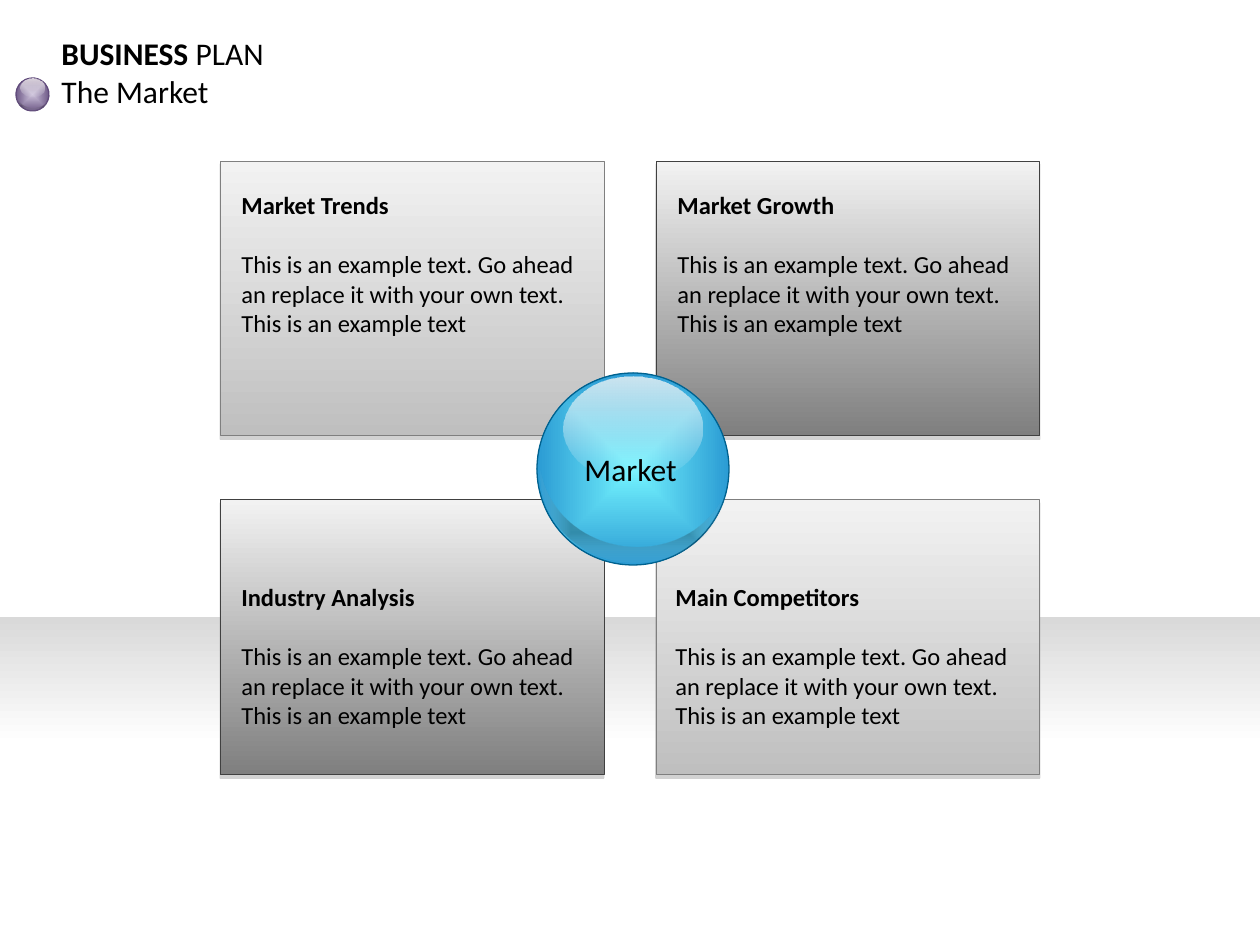
from lxml import etree
from pptx import Presentation
from pptx.dml.color import RGBColor
from pptx.enum.shapes import MSO_SHAPE
from pptx.oxml.ns import qn
from pptx.util import Pt

RECTANGLE, OVAL, MOON = MSO_SHAPE.RECTANGLE, MSO_SHAPE.OVAL, MSO_SHAPE.MOON
PX = 914400 / 126
FONT = "Calibri"
DOWN = '<a:lin ang="5400000" scaled="0"/>'
FROM_CENTRE = ('<a:path path="shape"><a:fillToRect l="50000" t="50000" '
               'r="50000" b="50000"/></a:path>')


def paint(shape, stops, direction, line=None, width=0.5):
    """Fill with a gradient of (percent, colour, opacity percent) stops and set the outline."""
    shape.shadow.inherit = False
    if line:
        shape.line.color.rgb = RGBColor.from_string(line)
        shape.line.width = Pt(width)
    else:
        shape.line.fill.background()
    stop_xml = "".join(
        f'<a:gs pos="{place * 1000}"><a:srgbClr val="{colour}">'
        f'<a:alpha val="{opacity * 1000}"/></a:srgbClr></a:gs>'
        for place, colour, opacity in stops)
    gradient = etree.fromstring(
        '<a:gradFill xmlns:a="http://schemas.openxmlformats.org/drawingml/2006/main" '
        f'rotWithShape="1"><a:gsLst>{stop_xml}</a:gsLst>{direction}</a:gradFill>')
    shape._element.spPr.find(qn("a:prstGeom")).addnext(gradient)


def add_text(bounds, size, paragraphs, gap=0):
    """Add a text box; each paragraph is a list of (text, bold) spans."""
    box = page.shapes.add_textbox(*[round(n * PX) for n in bounds])
    frame = box.text_frame
    frame.word_wrap = True
    for index, spans in enumerate(paragraphs):
        para = frame.add_paragraph() if index else frame.paragraphs[0]
        if index:
            para.space_before = Pt(gap)
        for text, bold in spans:
            span = para.add_run()
            span.text = text
            span.font.name = FONT
            span.font.size = Pt(size)
            span.font.bold = bold
            span.font.color.rgb = RGBColor.from_string("000000")


deck = Presentation()
deck.slide_width, deck.slide_height = round(1260 * PX), round(945 * PX)
page = deck.slides.add_slide(deck.slide_layouts[6])

# Shaded floor
floor = page.shapes.add_shape(RECTANGLE, 0, round(617 * PX), round(1260 * PX), round(328 * PX))
paint(floor, [(0, "D9D9D9", 100), (39, "FFFFFF", 100), (100, "FFFFFF", 100)], DOWN)

# Four panels: left, top, text left, text top, heading, end colour, outline
LIGHT, DARK = ("BFBFBF", "7F7F7F"), ("7F7F7F", "404040")
BODY = ("This is an example text. Go ahead an replace it with your own text. "
        "This is an example text")
panels = [
    (220, 161, 229, 184, "Market Trends", LIGHT),
    (656, 161, 665, 184, "Market Growth", DARK),
    (220, 500, 229, 576, "Industry Analysis", DARK),
    (656, 500, 663, 576, "Main Competitors", LIGHT),
]
for left, top, text_left, text_top, heading, (end_colour, outline) in panels:
    panel = page.shapes.add_shape(
        RECTANGLE, *[round(n * PX) for n in (left, top, 384, 275)])
    paint(panel, [(0, "F2F2F2", 100), (100, end_colour, 100)], DOWN, outline)
    effects = panel._element.spPr.find(qn("a:effectLst"))
    shadow = etree.SubElement(effects, qn("a:outerShdw"), blurRad="0", dist="22860",
                              dir="5400000", algn="t", rotWithShape="0")
    tint = etree.SubElement(shadow, qn("a:srgbClr"), val="808080")
    etree.SubElement(tint, qn("a:alpha"), val="35000")
    add_text((text_left, text_top, 368, 161), 14,
             [[(heading, True)], [(BODY, False)]], gap=17)

# Glossy spheres: left, top, diameter, inner colour, outer colour, outline
spheres = [
    (537, 373, 192, "74F4FF", "208ECD", "00618E"),
    (16, 78, 33, "CCC1DA", "604A7B", "604A7B"),
]
for left, top, size, inner, outer, outline in spheres:
    group = page.shapes.add_group_shape()
    ball, shine, shade = [
        group.shapes.add_shape(kind, round((left + x * size) * PX), round((top + y * size) * PX),
                               round(w * size * PX), round(h * size * PX))
        for kind, x, y, w, h in [(OVAL, 0, 0, 1, 1),
                                 (OVAL, 0.14, 0.02, 0.72, 0.54),
                                 (MOON, 0.26, 0.28, 0.44, 0.97)]]
    ball.rotation = 350.9
    paint(ball, [(0, inner, 100), (100, outer, 100)], FROM_CENTRE, outline, 0.75)
    paint(shine, [(0, "FFFCF9", 77), (100, "FFFFFF", 0)], DOWN)
    shade.rotation = 275.9
    shade.adjustments[0] = 0.19
    paint(shade, [(24, "000000", 24), (100, "FFFFFF", 0)], FROM_CENTRE)

add_text((572, 444, 130, 50), 18, [[("Market", False)]])
add_text((49, 28, 243, 89), 18,
         [[("BUSINESS", True), (" PLAN", False)], [("The Market", False)]])

deck.save("out.pptx")
